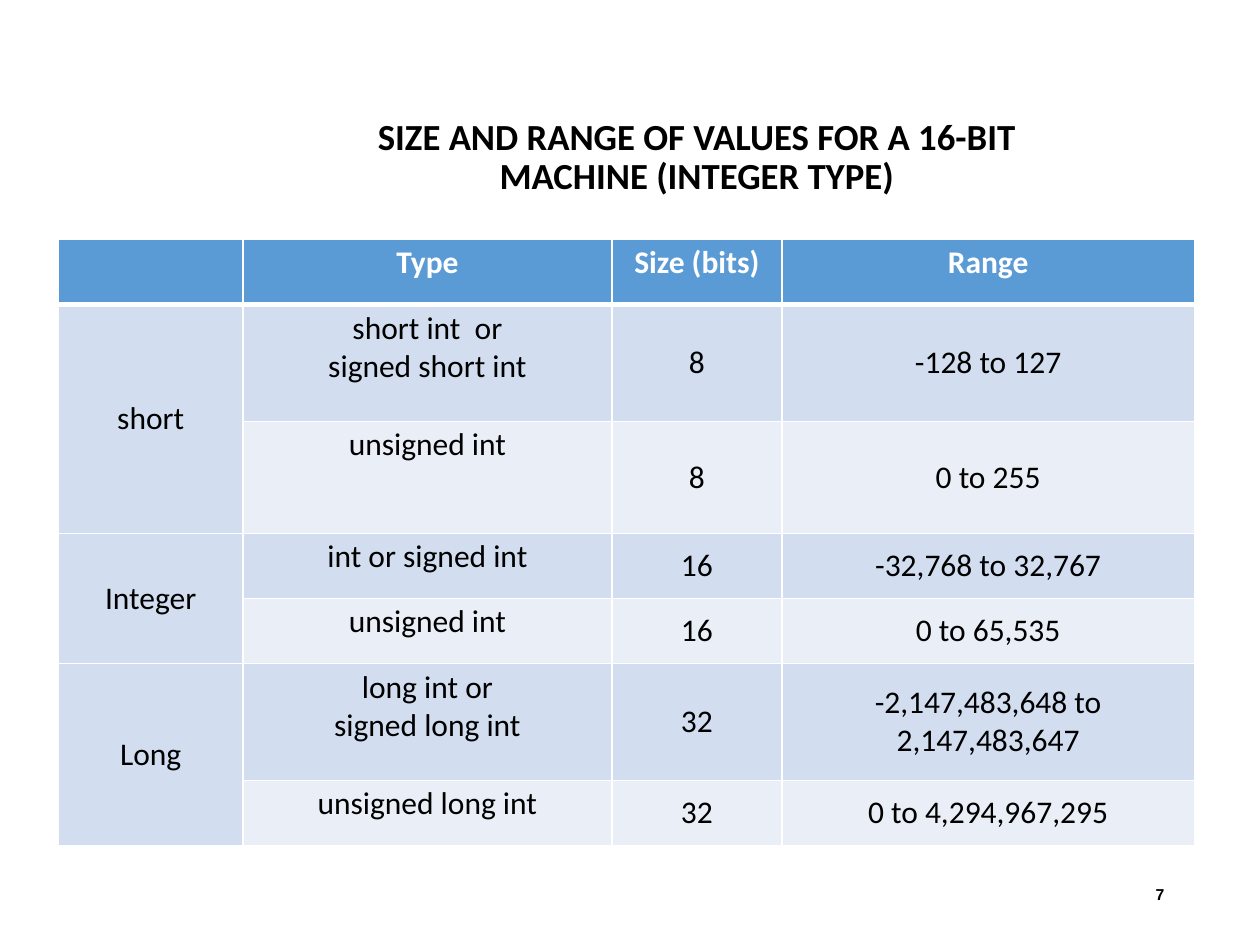
from pptx import Presentation
from pptx.dml.color import RGBColor
from pptx.enum.text import MSO_ANCHOR, PP_ALIGN
from pptx.oxml import parse_xml
from pptx.oxml.ns import nsdecls
from pptx.util import Pt

BLACK = RGBColor(0x00, 0x00, 0x00)
WHITE = RGBColor(0xFF, 0xFF, 0xFF)
BLUE = RGBColor(0x5B, 0x9B, 0xD5)
MID = RGBColor(0xD2, 0xDE, 0xEF)
PALE = RGBColor(0xEA, 0xEF, 0xF7)


def style(frame, size, name, color, bold, align):
    for para in frame.paragraphs:
        para.alignment = align
        for run in para.runs:
            font = run.font
            font.size, font.name, font.bold = Pt(size), name, bold
            font.color.rgb = color


def edge(cell, side, width):
    line = parse_xml(
        f'<a:{side} {nsdecls("a")} w="{Pt(width)}"><a:solidFill>'
        f'<a:srgbClr val="{WHITE}"/></a:solidFill></a:{side}>')
    cell._tc.get_or_add_tcPr().append(line)


deck = Presentation()
deck.slide_width, deck.slide_height = Pt(720), Pt(540)
slide = deck.slides.add_slide(deck.slide_layouts[6])

# Title and slide number
labels = [
    ("SIZE AND RANGE OF VALUES FOR A 16-BIT MACHINE (INTEGER TYPE)",
     (166.3, 63.4, 463.7, 54), 21, "Calibri", PP_ALIGN.CENTER, 0.9),
    ("7", (411.8, 500.4, 260.6, 21.6), 9, "Arial", PP_ALIGN.RIGHT, 1.0),
]
for text, place, size, name, align, space in labels:
    frame = slide.shapes.add_textbox(*map(Pt, place)).text_frame
    frame.word_wrap = True
    frame.vertical_anchor = MSO_ANCHOR.MIDDLE
    frame.text = text
    frame.paragraphs[0].line_spacing = space
    style(frame, size, name, BLACK, True, align)

# Table of integer types
rows = [
    ("", "Type", "Size (bits)", "Range"),
    ("short", "short int  or\nsigned short int", "8", "-128 to 127"),
    ("", "unsigned int", "8", "0 to 255"),
    ("Integer", "int or signed int", "16", "-32,768 to 32,767"),
    ("", "unsigned int", "16", "0 to 65,535"),
    ("Long", "long int or\nsigned long int", "32",
     "-2,147,483,648 to 2,147,483,647"),
    ("", "unsigned long int", "32", "0 to 4,294,967,295"),
]
widths = [105.5, 210.8, 97.2, 235.7]
heights = [37.2, 66.8, 64, 37.2, 37.2, 66.8, 37.2]
table = slide.shapes.add_table(
    len(rows), len(widths), Pt(33.4), Pt(136.8),
    Pt(sum(widths)), Pt(sum(heights))).table
for col, width in zip(table.columns, widths):
    col.width = Pt(width)
for row, height in zip(table.rows, heights):
    row.height = Pt(height)

for r, row in enumerate(rows):
    head = r == 0
    for c, text in enumerate(row):
        cell = table.cell(r, c)
        cell.margin_left = cell.margin_right = Pt(5.2)
        cell.margin_top = cell.margin_bottom = Pt(2.6)
        # The header and the type column sit at the top
        top = head or c == 1
        cell.vertical_anchor = MSO_ANCHOR.TOP if top else MSO_ANCHOR.MIDDLE
        for side in ("lnL", "lnR", "lnT", "lnB"):
            thick = (head and side == "lnB") or (r == 1 and side == "lnT")
            edge(cell, side, 3 if thick else 1)
        cell.fill.solid()
        band = MID if c == 0 or r % 2 else PALE
        cell.fill.fore_color.rgb = BLUE if head else band
        cell.text_frame.text = text
        style(cell.text_frame, 18, "Calibri", WHITE if head else BLACK,
              head, PP_ALIGN.CENTER)

# Each group name spans two rows
for r in range(1, len(rows), 2):
    table.cell(r, 0).merge(table.cell(r + 1, 0))

deck.save("out.pptx")
